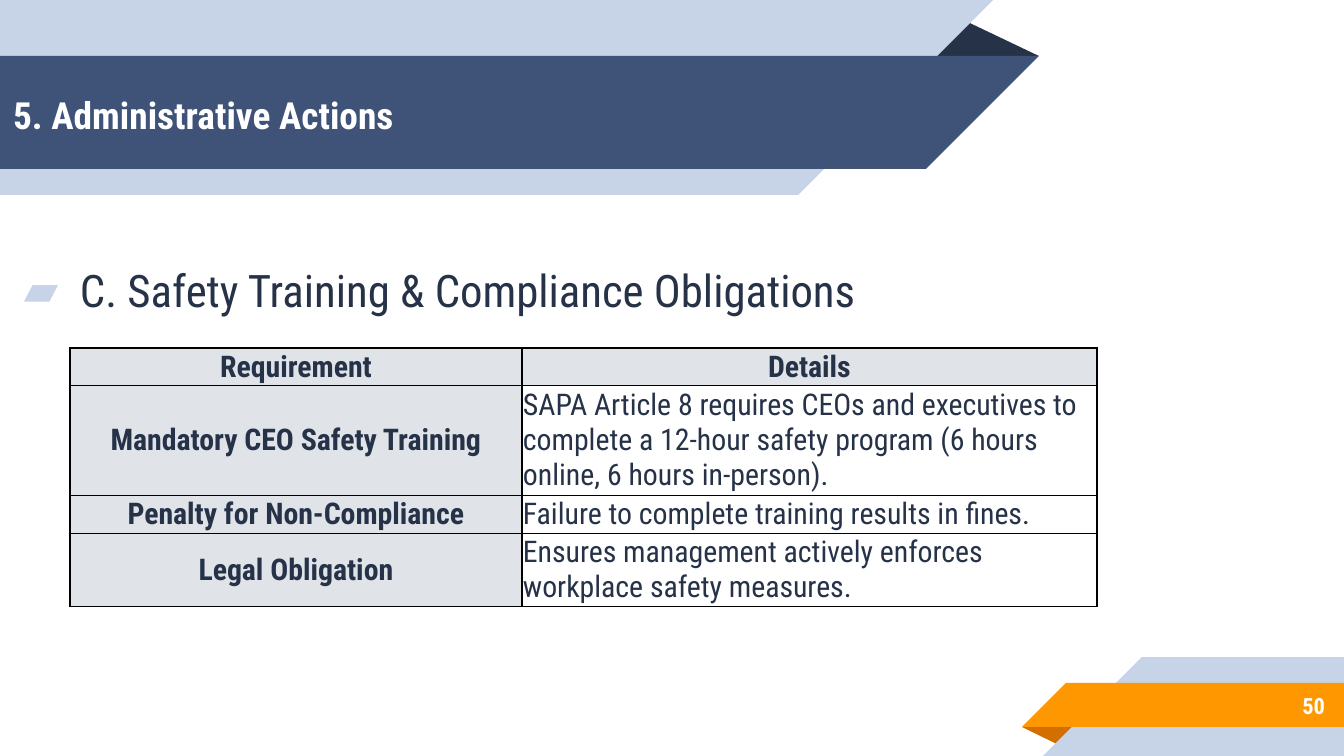
from lxml import etree
from pptx import Presentation
from pptx.dml.color import RGBColor
from pptx.enum.shapes import MSO_SHAPE
from pptx.enum.text import MSO_ANCHOR, PP_ALIGN
from pptx.oxml.ns import qn
from pptx.util import Emu, Pt

SCALE = 914400 / 134.4
FONT = "Roboto Condensed"
RECT, CORNER, PEAK = MSO_SHAPE.RECTANGLE, MSO_SHAPE.RIGHT_TRIANGLE, MSO_SHAPE.ISOSCELES_TRIANGLE
MIDDLE = MSO_ANCHOR.MIDDLE
LEFT, CENTER, RIGHT = PP_ALIGN.LEFT, PP_ALIGN.CENTER, PP_ALIGN.RIGHT

PALE = RGBColor(0xC7, 0xD3, 0xE6)
NAVY = RGBColor(0x3F, 0x53, 0x78)
INK = RGBColor(0x26, 0x32, 0x48)
ORANGE = RGBColor(0xFF, 0x98, 0x00)
RUST = RGBColor(0xD2, 0x6F, 0x00)
GREY = RGBColor(0xE0, 0xE4, 0xE9)
WHITE = RGBColor(0xFF, 0xFF, 0xFF)
BLACK = RGBColor(0x00, 0x00, 0x00)

ROWS = [
    ("Requirement", "Details"),
    ("Mandatory CEO Safety Training",
     "SAPA Article 8 requires CEOs and executives to complete a 12-hour "
     "safety program (6 hours online, 6 hours in-person)."),
    ("Penalty for Non-Compliance", "Failure to complete training results in fines."),
    ("Legal Obligation", "Ensures management actively enforces workplace safety measures."),
]
WIDTHS = [452, 575]
HEIGHTS = [37, 107, 38, 72]


def px(count):
    """Turn pixels into EMU."""
    return Emu(round(count * SCALE))


def assign(item, values):
    """Set every named attribute on an item."""
    for name, value in values.items():
        setattr(item, name, value)


def add_shape(slide, kind, box, color, turn=0):
    """Add a plain filled shape."""
    shape = slide.shapes.add_shape(kind, *map(px, box))
    shape.shadow.inherit = False
    shape.fill.solid()
    shape.fill.fore_color.rgb = color
    shape.line.fill.background()
    shape.rotation = turn
    return shape


def add_peak(slide, box, color, turn=0):
    """Add the triangle that shows the fold of a ribbon."""
    add_shape(slide, PEAK, box, color, turn).adjustments[0] = 0.32


def add_head(slide, top, width, height, color):
    """Add a ribbon from the left edge with a slanted right end."""
    add_shape(slide, RECT, (0, top, width, height), color)
    add_shape(slide, CORNER, (width, top, height, height), color, 90)


def add_foot(slide, left, top, height, color):
    """Add a ribbon to the right edge with a slanted left end."""
    add_shape(slide, RECT, (left, top, 1344 - left, height), color)
    add_shape(slide, CORNER, (left - height, top, height, height), color, 270)


def write(frame, text, size, color, bold=False, align=LEFT):
    """Write one paragraph and return it."""
    para = frame.paragraphs[0]
    para.alignment = align
    run = para.add_run()
    run.text = text
    assign(run.font, {"name": FONT, "size": Pt(size), "bold": bold})
    run.font.color.rgb = color
    return para


def add_text(slide, box, *style):
    """Add a wrapped text box centred in height."""
    frame = slide.shapes.add_textbox(*map(px, box)).text_frame
    inset = px(13)
    assign(frame, {"word_wrap": True, "vertical_anchor": MIDDLE,
                   "margin_left": inset, "margin_right": inset,
                   "margin_top": inset, "margin_bottom": inset})
    return write(frame, *style)


def add_bullet(para):
    """Give a paragraph a hanging pale bullet."""
    para.space_before = Pt(6)
    props = para._p.get_or_add_pPr()
    props.set("marL", str(px(67)))
    props.set("indent", str(-px(56)))
    tint = etree.SubElement(props, qn("a:buClr"))
    etree.SubElement(tint, qn("a:srgbClr"), val=str(PALE))
    etree.SubElement(props, qn("a:buFont"), typeface=FONT)
    etree.SubElement(props, qn("a:buChar"), char="▰")


def add_edges(cell):
    """Draw a thin black line on each side of a cell."""
    props = cell._tc.get_or_add_tcPr()
    for side in "LRTB":
        line = etree.SubElement(props, qn(f"a:ln{side}"), w=str(Pt(0.75)))
        fill = etree.SubElement(line, qn("a:solidFill"))
        etree.SubElement(fill, qn("a:srgbClr"), val=str(BLACK))


def fill_cell(cell, text, head):
    """Format one cell as a heading or as plain detail."""
    inset = px(1)
    assign(cell, {"vertical_anchor": MIDDLE, "margin_left": inset, "margin_right": inset,
                  "margin_top": inset, "margin_bottom": inset})
    add_edges(cell)
    if head:
        cell.fill.solid()
        cell.fill.fore_color.rgb = GREY
    else:
        cell.fill.background()
    para = write(cell.text_frame, text, 16, INK, head, CENTER if head else LEFT)
    para.space_after = Pt(8)


def add_grid(slide, left, top):
    """Add the table of duties."""
    size = (left, top, sum(WIDTHS), sum(HEIGHTS))
    table = slide.shapes.add_table(len(ROWS), len(WIDTHS), *map(px, size)).table
    assign(table, {"first_row": False, "horz_banding": False})
    for column, width in zip(table.columns, WIDTHS):
        column.width = px(width)
    for row, height in zip(table.rows, HEIGHTS):
        row.height = px(height)
    for i, texts in enumerate(ROWS):
        for j, text in enumerate(texts):
            fill_cell(table.cell(i, j), text, i == 0 or j == 0)


def main():
    """Build and save the slide."""
    deck = Presentation()
    assign(deck, {"slide_width": px(1344), "slide_height": px(756)})
    slide = deck.slides.add_slide(deck.slide_layouts[6])

    add_peak(slide, (1022, 727, 57, 19), RUST, 180)
    add_foot(slide, 1142, 657, 99, PALE)
    add_foot(slide, 1066, 683, 44, ORANGE)
    add_peak(slide, (925, 19, 114, 37), INK)
    add_head(slide, 0, 798, 195, PALE)
    add_head(slide, 56, 926, 113, NAVY)

    add_text(slide, (0, 58, 978, 113), "5. Administrative Actions", 20, WHITE, True)
    topic = add_text(slide, (0, 1, 1344, 578),
                     "C. Safety Training & Compliance Obligations", 24, INK)
    add_bullet(topic)
    add_text(slide, (1119, 682, 219, 47), "50", 12, WHITE, True, RIGHT)
    add_grid(slide, 70, 348)
    deck.save("out.pptx")


if __name__ == "__main__":
    main()
